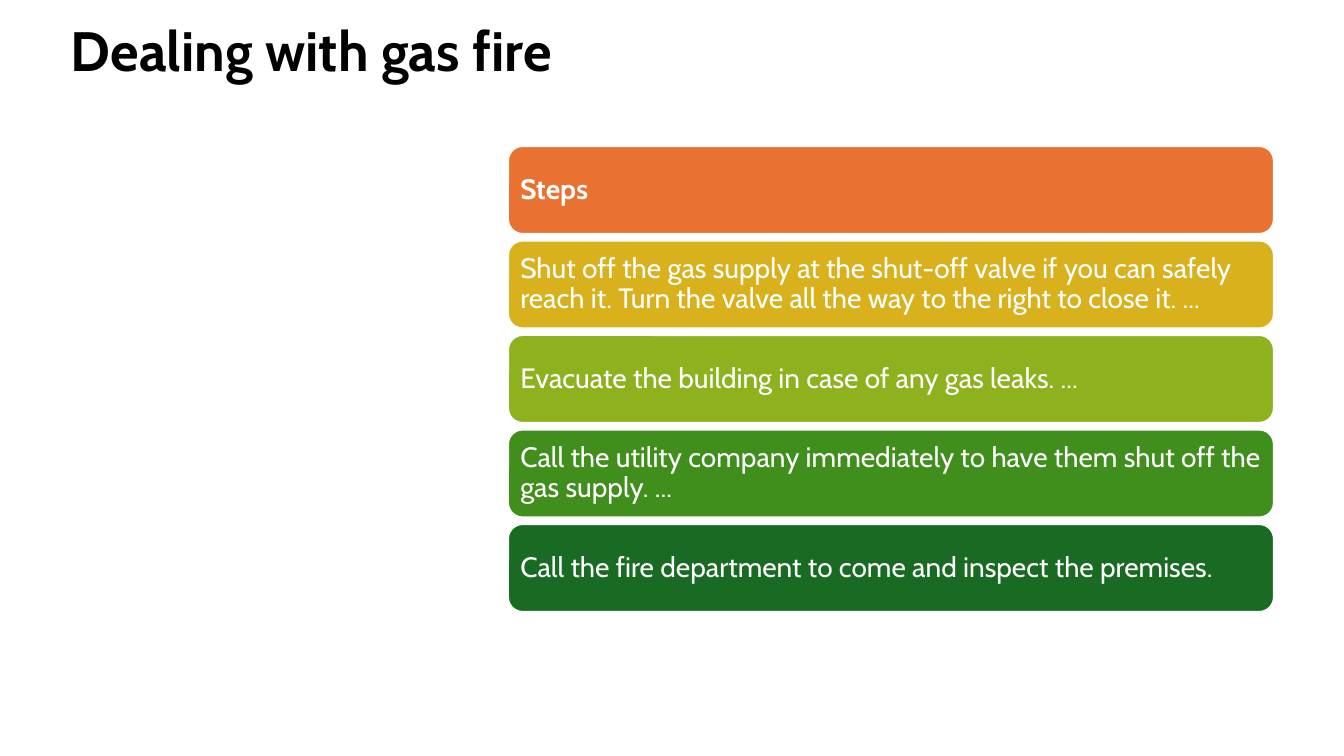
from dataclasses import dataclass

from pptx import Presentation
from pptx.dml.color import RGBColor
from pptx.enum.shapes import MSO_SHAPE
from pptx.enum.text import MSO_ANCHOR, PP_ALIGN
from pptx.util import Emu, Pt

ROUNDED = MSO_SHAPE.ROUNDED_RECTANGLE
MIDDLE = MSO_ANCHOR.MIDDLE
LEFT = PP_ALIGN.LEFT

TITLE = "Dealing with gas fire"
STEPS = [
    ("Steps", "E97132"),
    ("Shut off the gas supply at the shut-off valve if you can safely reach it. "
     "Turn the valve all the way to the right to close it. ...", "D8B11D"),
    ("Evacuate the building in case of any gas leaks. ...", "8EB21E"),
    ("Call the utility company immediately to have them shut off the gas supply. ...", "408E1C"),
    ("Call the fire department to come and inspect the premises.", "196B24"),
]


@dataclass(frozen=True)
class Theme:
    font: str = "Cabin"
    title_color: str = "000000"
    step_color: str = "FFFFFF"
    outline: str = "FFFFFF"
    title_size: float = 39.6
    step_size: float = 20
    outline_width: float = 1.5
    line_spacing: float = 0.9


THEME = Theme()
SLIDE_WIDTH, SLIDE_HEIGHT = 1344, 756
TITLE_BOX = (61, 20, 933, 68)
STACK_LEFT, STACK_TOP, STACK_WIDTH, STACK_HEIGHT = 508, 146, 766, 466
STEP_HEIGHT = 88


def px(length):
    return Emu(round(length * 914400 / 100.8))


def write_text(shape, text, *, size, color, bold=False, inset_x=8, inset_y=8):
    frame = shape.text_frame
    frame.word_wrap = True
    frame.vertical_anchor = MIDDLE
    frame.margin_left = frame.margin_right = px(inset_x)
    frame.margin_top = frame.margin_bottom = px(inset_y)
    paragraph = frame.paragraphs[0]
    paragraph.alignment = LEFT
    paragraph.line_spacing = THEME.line_spacing
    run = paragraph.add_run()
    run.text = text
    run.font.name = THEME.font
    run.font.size = Pt(size)
    run.font.bold = bold
    run.font.color.rgb = RGBColor.from_string(color)


def add_step(slide, text, fill, top, bold):
    shape = slide.shapes.add_shape(
        ROUNDED, px(STACK_LEFT), px(top), px(STACK_WIDTH), px(STEP_HEIGHT))
    shape.shadow.inherit = False
    shape.fill.solid()
    shape.fill.fore_color.rgb = RGBColor.from_string(fill)
    shape.line.color.rgb = RGBColor.from_string(THEME.outline)
    shape.line.width = Pt(THEME.outline_width)
    write_text(shape, text, size=THEME.step_size, color=THEME.step_color, bold=bold)


def main():
    presentation = Presentation()
    presentation.slide_width = px(SLIDE_WIDTH)
    presentation.slide_height = px(SLIDE_HEIGHT)
    slide = presentation.slides.add_slide(presentation.slide_layouts[6])

    title = slide.shapes.add_textbox(*map(px, TITLE_BOX))
    write_text(title, TITLE, size=THEME.title_size, color=THEME.title_color,
               bold=True, inset_x=10, inset_y=5)

    pitch = (STACK_HEIGHT - STEP_HEIGHT) / (len(STEPS) - 1)
    for index, (text, fill) in enumerate(STEPS):
        add_step(slide, text, fill, STACK_TOP + index * pitch, bold=index == 0)

    presentation.save("out.pptx")


if __name__ == "__main__":
    main()
